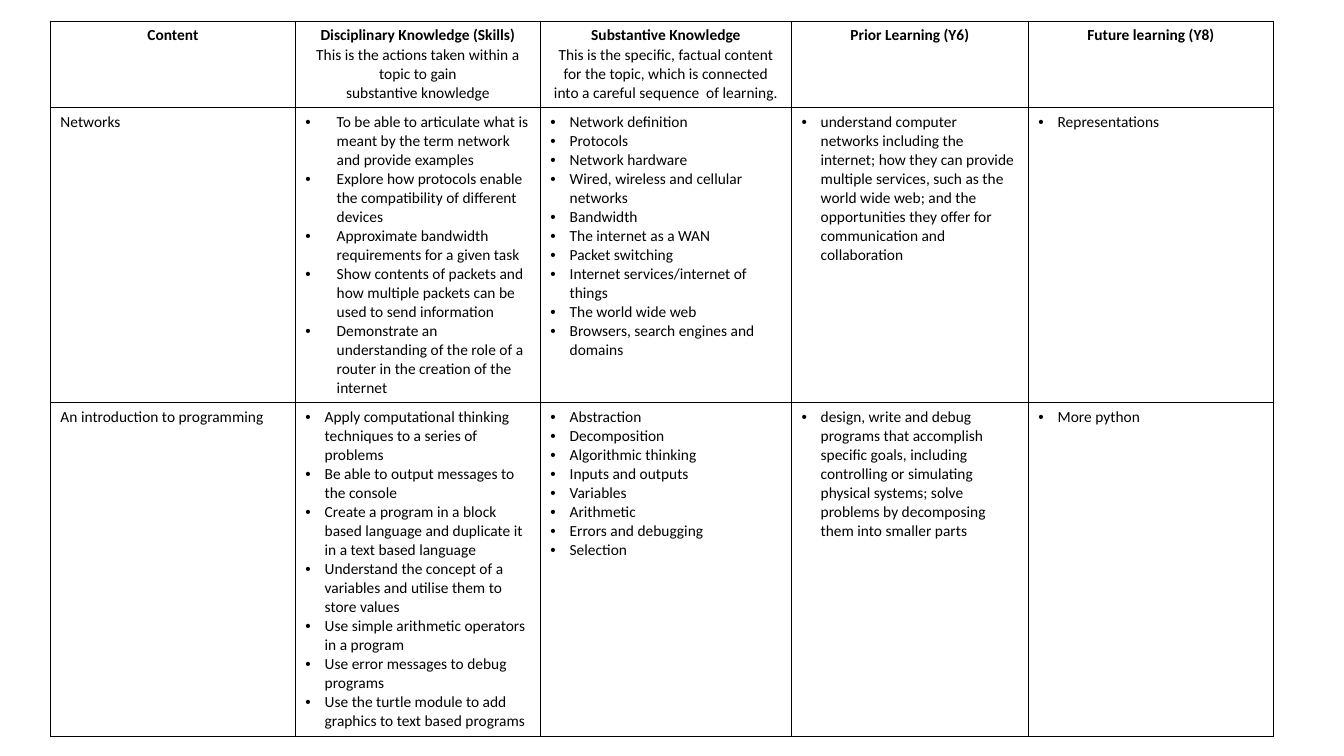
from lxml.etree import SubElement
from pptx import Presentation
from pptx.dml.color import RGBColor
from pptx.enum.text import PP_ALIGN
from pptx.oxml.ns import qn
from pptx.util import Inches, Pt

BLACK = RGBColor(0x00, 0x00, 0x00)
WHITE = RGBColor(0xFF, 0xFF, 0xFF)

COLUMN_WIDTHS = [2.43, 2.43, 2.49, 2.35, 2.43]
ROW_HEIGHTS = [0.85, 2.93, 3.31]
WIDE_INDENT, INDENT = 0.31, 0.19

# Each cell is a list of paragraphs
CURRICULUM = [
    [
        ["Content"],
        [
            "Disciplinary Knowledge (Skills)",
            "This is the actions taken within a",
            "topic to gain",
            "substantive knowledge",
        ],
        [
            "Substantive Knowledge",
            "This is the specific, factual content",
            "for the topic, which is connected",
            "into a careful sequence  of learning.",
        ],
        ["Prior Learning (Y6)"],
        ["Future learning (Y8)"],
    ],
    [
        ["Networks"],
        [
            "To be able to articulate what is meant by the term network and provide examples",
            "Explore how protocols enable the compatibility of different devices",
            "Approximate bandwidth requirements for a given task",
            "Show contents of packets and how multiple packets can be used to send information",
            "Demonstrate an understanding of the role of a router in the creation of the internet",
        ],
        [
            "Network definition",
            "Protocols",
            "Network hardware",
            "Wired, wireless and cellular networks",
            "Bandwidth",
            "The internet as a WAN",
            "Packet switching",
            "Internet services/internet of things",
            "The world wide web",
            "Browsers, search engines and domains",
        ],
        [
            "understand computer networks including the internet; how they can provide "
            "multiple services, such as the world wide web; and the opportunities they "
            "offer for communication and collaboration"
        ],
        ["Representations"],
    ],
    [
        ["An introduction to programming"],
        [
            "Apply computational thinking techniques to a series of problems",
            "Be able to output messages to the console",
            "Create a program in a block based language and duplicate it in a text based language",
            "Understand the concept of a variables and utilise them to store values",
            "Use simple arithmetic operators in a program",
            "Use error messages to debug programs",
            "Use the turtle module to add graphics to text based programs",
        ],
        [
            "Abstraction",
            "Decomposition",
            "Algorithmic thinking",
            "Inputs and outputs",
            "Variables",
            "Arithmetic",
            "Errors and debugging",
            "Selection",
        ],
        [
            "design, write and debug programs that accomplish specific goals, including "
            "controlling or simulating physical systems; solve problems by decomposing "
            "them into smaller parts"
        ],
        ["More python"],
    ],
]


def add_bullet(paragraph, indent):
    properties = paragraph._p.get_or_add_pPr()
    properties.set("marL", str(Inches(indent)))
    properties.set("indent", str(-Inches(indent)))
    SubElement(properties, qn("a:buFont")).set("typeface", "Arial")
    SubElement(properties, qn("a:buChar")).set("char", "•")


def add_borders(cell):
    properties = cell._tc.get_or_add_tcPr()
    for side in ("L", "R", "T", "B"):
        line = SubElement(properties, qn(f"a:ln{side}"))
        line.set("w", str(Pt(1)))
        fill = SubElement(line, qn("a:solidFill"))
        SubElement(fill, qn("a:srgbClr")).set("val", str(BLACK))


presentation = Presentation()
presentation.slide_width = Inches(13.33)
presentation.slide_height = Inches(7.5)
slide = presentation.slides.add_slide(presentation.slide_layouts[6])

# Table grid
table = slide.shapes.add_table(
    len(ROW_HEIGHTS), len(COLUMN_WIDTHS), Inches(0.5), Inches(0.21),
    Inches(sum(COLUMN_WIDTHS)), Inches(sum(ROW_HEIGHTS)),
).table
table.first_row = False
table.horz_banding = False
for column, width in zip(table.columns, COLUMN_WIDTHS):
    column.width = Inches(width)
for row, height in zip(table.rows, ROW_HEIGHTS):
    row.height = Inches(height)

# Cell contents
for row_index, topic in enumerate(CURRICULUM):
    for column_index, lines in enumerate(topic):
        cell = table.cell(row_index, column_index)
        add_borders(cell)
        cell.fill.solid()
        cell.fill.fore_color.rgb = WHITE
        cell.text_frame.text = "\n".join(lines)
        is_header = row_index == 0
        for line_index, paragraph in enumerate(cell.text_frame.paragraphs):
            if is_header:
                paragraph.alignment = PP_ALIGN.CENTER
            elif column_index > 0:
                is_network_skill = (row_index, column_index) == (1, 1)
                add_bullet(paragraph, WIDE_INDENT if is_network_skill else INDENT)
            for run in paragraph.runs:
                run.font.name = "Calibri"
                run.font.size = Pt(11)
                run.font.bold = is_header and line_index == 0
                run.font.color.rgb = BLACK

presentation.save("out.pptx")
